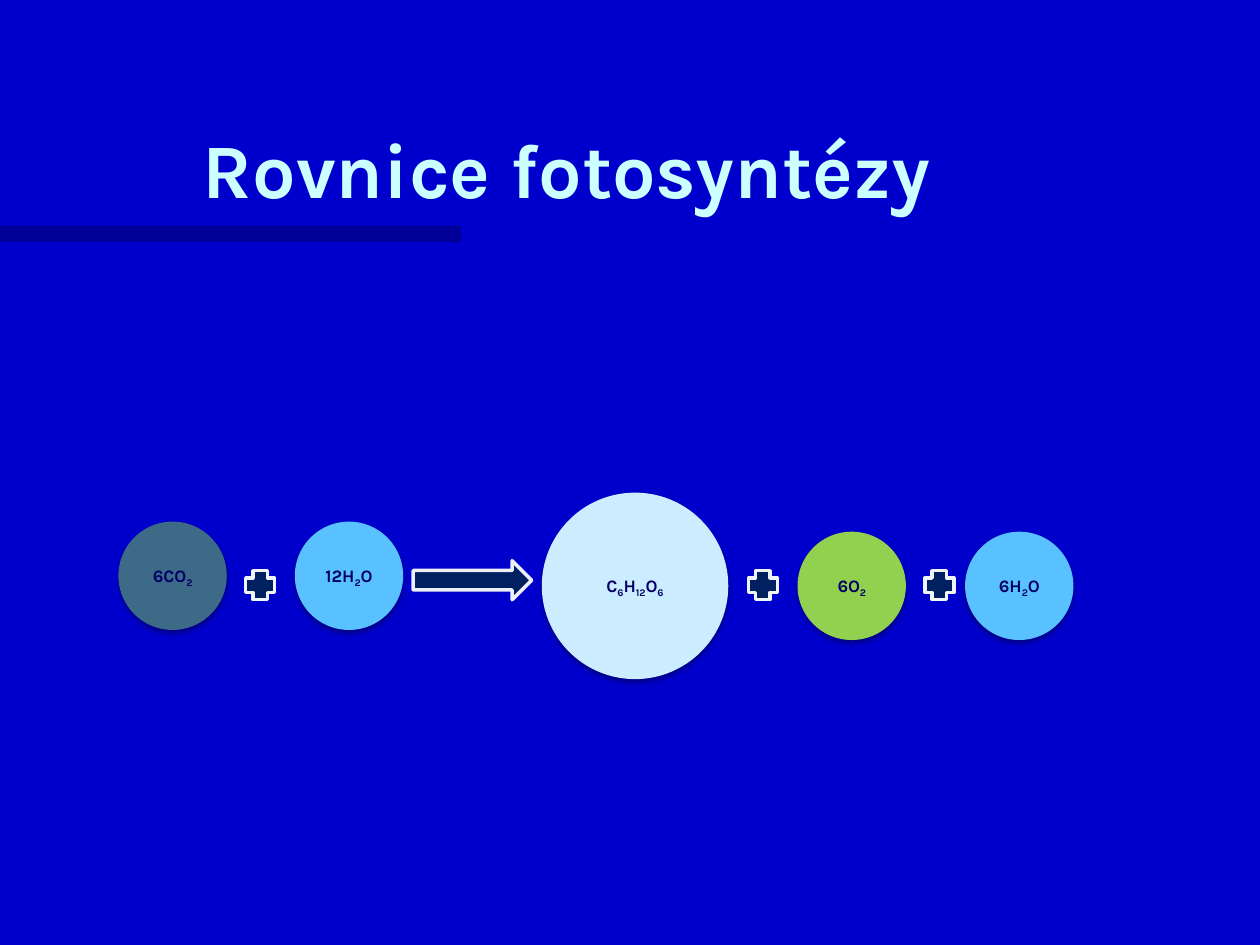
import dataclasses

import lxml.etree
import pptx
import pptx.dml.color
import pptx.enum.shapes
import pptx.enum.text
import pptx.oxml
import pptx.oxml.ns
import pptx.util

Inches = pptx.util.Inches
Pt = pptx.util.Pt
Kind = pptx.enum.shapes.MSO_SHAPE
Anchor = pptx.enum.text.MSO_ANCHOR
Align = pptx.enum.text.PP_ALIGN

FONT = "Karla"
COLORS = {
    "back": "0000CC",
    "navy": "000066",
    "title": "CCFFFF",
    "carbon": "3D6A87",
    "water": "59C1FF",
    "sugar": "CCECFF",
    "oxygen": "92D050",
    "sign": "002060",
    "edge": "EFF4F8",
    "rim": "EEEEF9",
    "shade": "000000",
}


@dataclasses.dataclass
class Ball:
    terms: tuple[str, ...]
    left: float
    top: float
    size: float
    color: str


@dataclasses.dataclass
class Sign:
    kind: int
    left: float
    top: float
    width: float
    height: float
    edge: str


BALLS = [
    Ball(("6CO", "2"), 0.94, 4.14, 0.86, "carbon"),
    Ball(("12H", "2", "O"), 2.34, 4.14, 0.86, "water"),
    Ball(("C", "6", "H", "12", "O", "6"), 4.3, 3.91, 1.48, "sugar"),
    Ball(("6O", "2"), 6.33, 4.22, 0.86, "oxygen"),
    Ball(("6H", "2", "O"), 7.66, 4.22, 0.86, "water"),
]
SIGNS = [Sign(Kind.CROSS, left, 4.53, 0.23, 0.23, "edge") for left in (1.95, 5.94, 7.34)]
SIGNS.append(Sign(Kind.RIGHT_ARROW, 3.28, 4.45, 0.94, 0.31, "rim"))


def tint(name: str) -> pptx.dml.color.RGBColor:
    return pptx.dml.color.RGBColor.from_string(COLORS[name])


def paint(target, name: str) -> None:
    target.fill.solid()
    target.fill.fore_color.rgb = tint(name)


def style(run, size: float, color: str) -> None:
    run.font.name = FONT
    run.font.size = Pt(size)
    run.font.bold = True
    run.font.color.rgb = tint(color)


def add_form(shapes, kind: int, box: tuple[float, ...], color: str):
    form = shapes.add_shape(kind, *map(Inches, box))
    form.shadow.inherit = False
    paint(form, color)
    form.line.fill.background()
    return form


def add_shade(form) -> None:
    props = form._element.spPr
    effects = props.find(pptx.oxml.ns.qn("a:effectLst"))
    effects.append(pptx.oxml.parse_xml(
        f'<a:outerShdw {pptx.oxml.ns.nsdecls("a")} blurRad="{Pt(3.1)}" dist="{Pt(1.8)}" '
        f'dir="5400000" rotWithShape="0"><a:srgbClr val="{COLORS["shade"]}">'
        '<a:alpha val="35000"/></a:srgbClr></a:outerShdw>'))


def add_bar(slide) -> None:
    bar = add_form(slide.shapes, Kind.RECTANGLE, (0, 1.79, 3.66, 0.13), "navy")
    color = bar._element.spPr.find(".//" + pptx.oxml.ns.qn("a:srgbClr"))
    lxml.etree.SubElement(color, pptx.oxml.ns.qn("a:alpha"), val="50000")


def add_title(slide, text: str) -> None:
    frame = slide.shapes.add_textbox(
        Inches(0.25), Inches(0.5), Inches(8.5), Inches(1.25)).text_frame
    frame.word_wrap = True
    frame.vertical_anchor = Anchor.BOTTOM
    frame.text = text
    line = frame.paragraphs[0]
    line.alignment = Align.CENTER
    style(line.runs[0], 44, "title")


def add_ball(slide, ball: Ball) -> None:
    group = slide.shapes.add_group_shape()
    disc = add_form(group.shapes, Kind.OVAL,
                    (ball.left, ball.top, ball.size, ball.size), ball.color)
    add_shade(disc)
    side = ball.size / 2 ** 0.5
    inset = (ball.size - side) / 2
    label = group.shapes.add_textbox(
        Inches(ball.left + inset), Inches(ball.top + inset), Inches(side), Inches(side))
    frame = label.text_frame
    frame.word_wrap = True
    frame.vertical_anchor = Anchor.MIDDLE
    frame.margin_left = frame.margin_right = Inches(0.01)
    frame.margin_top = frame.margin_bottom = Inches(0.01)
    line = frame.paragraphs[0]
    line.alignment = Align.CENTER
    line.line_spacing = 0.9
    for index, term in enumerate(ball.terms):
        run = line.add_run()
        run.text = term
        style(run, 10, "navy")
        if index % 2:
            run._r.get_or_add_rPr().set("baseline", "-25000")


def add_sign(slide, sign: Sign) -> None:
    box = (sign.left, sign.top, sign.width, sign.height)
    form = add_form(slide.shapes, sign.kind, box, "sign")
    form.line.color.rgb = tint(sign.edge)
    form.line.width = Pt(2)


def main() -> None:
    deck = pptx.Presentation()
    deck.slide_width = Inches(10)
    deck.slide_height = Inches(7.5)
    slide = deck.slides.add_slide(deck.slide_layouts[6])
    paint(slide.background, "back")
    add_bar(slide)
    add_title(slide, "Rovnice fotosyntézy")
    for ball in BALLS:
        add_ball(slide, ball)
    for sign in SIGNS:
        add_sign(slide, sign)
    deck.save("out.pptx")


if __name__ == "__main__":
    main()
